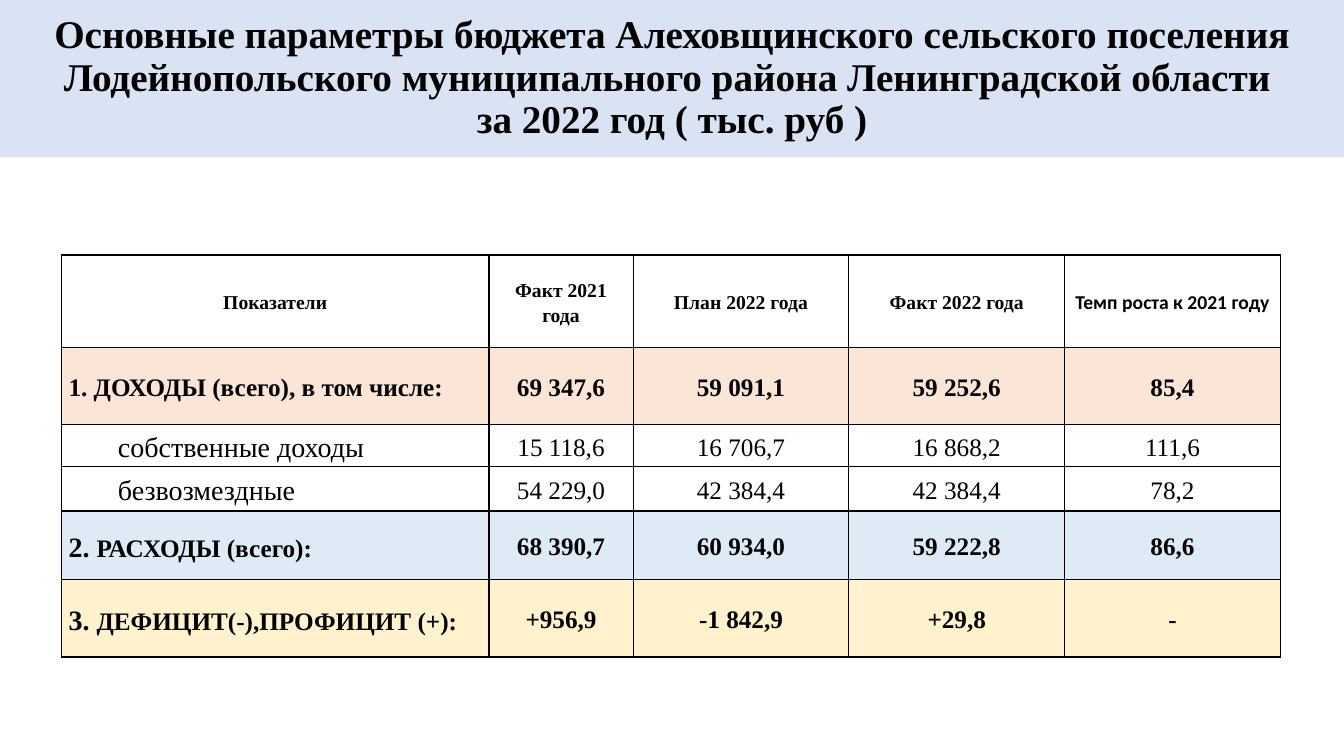
from lxml import etree
from pptx import Presentation
from pptx import util as u
from pptx.dml.color import RGBColor
from pptx.enum import shapes, text
from pptx.oxml.ns import qn

# Content: a label is a list of (text, size) runs
TITLE = ("Основные параметры бюджета Алеховщинского сельского поселения "
         "Лодейнопольского муниципального района Ленинградской области \v"
         "за 2022 год ( тыс. руб )")
HEADER = ["Показатели", "Факт 2021 года", "План 2022 года", "Факт 2022 года",
          "Темп роста к 2021 году"]
# label runs, values, fill, bold, label indent
ROWS = [
    ([("1. ДОХОДЫ (всего), в том числе:", 18)],
     ["69 347,6", "59 091,1", "59 252,6", "85,4"], "income", True, 0),
    ([("собственные доходы", 20)],
     ["15 118,6", "16 706,7", "16 868,2", "111,6"], "white", False, 0.49),
    ([("безвозмездные", 20)],
     ["54 229,0", "42 384,4", "42 384,4", "78,2"], "white", False, 0.49),
    ([("2. ", 20), ("РАСХОДЫ (всего):", 18)],
     ["68 390,7", "60 934,0", "59 222,8", "86,6"], "expense", True, 0),
    ([("3. ", 20), ("ДЕФИЦИТ(-),ПРОФИЦИТ (+):", 18)],
     ["+956,9", "-1 842,9", "+29,8", "-"], "balance", True, 0),
]
COL_WIDTHS = [4.24, 1.43, 2.14, 2.14, 2.14]
ROW_HEIGHTS = [0.92, 0.76, 0.42, 0.44, 0.68, 0.77]
COLORS = {"title": "DAE3F3", "income": "FBE5D6", "expense": "DEEBF7",
          "balance": "FFF2CC", "white": "FFFFFF", "black": "000000"}
SERIF, SANS = "Times New Roman", "Calibri"
CELL = {"margin_left": u.Inches(0.07), "margin_right": u.Inches(0.07),
        "margin_top": 0, "margin_bottom": 0,
        "vertical_anchor": text.MSO_ANCHOR.MIDDLE}
CENTER, LEFT = text.PP_ALIGN.CENTER, text.PP_ALIGN.LEFT


def rgb(name):
    return RGBColor.from_string(COLORS[name])


def set_attrs(obj, values):
    for name, value in values.items():
        setattr(obj, name, value)


def style_run(r, size, bold=True, font=SERIF):
    set_attrs(r.font, {"size": u.Pt(size), "bold": bold, "name": font})
    r.font.color.rgb = rgb("black")


def add_borders(cell):
    tcPr = cell._tc.get_or_add_tcPr()
    for side in ("lnL", "lnR", "lnT", "lnB"):
        ln = etree.SubElement(tcPr, qn("a:" + side), w=str(u.Pt(1)))
        fill = etree.SubElement(ln, qn("a:solidFill"))
        etree.SubElement(fill, qn("a:srgbClr"), val=COLORS["black"])


def fill_cell(cell, runs, fill, bold=True, align=CENTER, indent=0, font=SERIF):
    set_attrs(cell, CELL)
    add_borders(cell)
    if fill:
        cell.fill.solid()
        cell.fill.fore_color.rgb = rgb(fill)
    else:
        cell.fill.background()
    p = cell.text_frame.paragraphs[0]
    set_attrs(p, {"alignment": align, "line_spacing": 1.15, "space_after": u.Pt(10)})
    if indent:
        p._p.get_or_add_pPr().set("marL", str(u.Inches(indent)))
    for words, size in runs:
        r = p.add_run()
        r.text = words
        style_run(r, size, bold, font)


def main():
    prs = Presentation()
    prs.slide_width, prs.slide_height = u.Inches(13.33), u.Inches(7.5)
    s = prs.slides.add_slide(prs.slide_layouts[6])

    # Title band
    sp = s.shapes.add_shape(shapes.MSO_SHAPE.RECTANGLE, 0, 0,
                            prs.slide_width, u.Inches(1.56))
    sp.shadow.inherit = False
    sp.fill.solid()
    sp.fill.fore_color.rgb = rgb("title")
    sp.line.fill.background()
    tf = sp.text_frame
    set_attrs(tf, {"word_wrap": True, "vertical_anchor": text.MSO_ANCHOR.MIDDLE})
    p = tf.paragraphs[0]
    p.text = TITLE
    set_attrs(p, {"alignment": CENTER, "line_spacing": 0.9})
    for r in p.runs:
        style_run(r, 28)

    # Budget table
    table = s.shapes.add_table(
        len(ROW_HEIGHTS), len(COL_WIDTHS), u.Inches(0.61), u.Inches(2.53),
        u.Inches(sum(COL_WIDTHS)), u.Inches(sum(ROW_HEIGHTS))).table
    set_attrs(table, {"first_row": False, "horz_banding": False})
    for col, width in zip(table.columns, COL_WIDTHS):
        col.width = u.Inches(width)
    for row, height in zip(table.rows, ROW_HEIGHTS):
        row.height = u.Inches(height)

    # Header row
    for c, words in enumerate(HEADER):
        fill_cell(table.cell(0, c), [(words, 14)], "white" if c else None,
                  font=SANS if c == len(HEADER) - 1 else SERIF)

    # Body rows
    for i, (label, values, fill, bold, indent) in enumerate(ROWS, 1):
        fill_cell(table.cell(i, 0), label, None if indent else fill, bold, LEFT, indent)
        for c, value in enumerate(values, 1):
            fill_cell(table.cell(i, c), [(value, 18)], fill, bold)

    prs.save("out.pptx")


if __name__ == "__main__":
    main()
